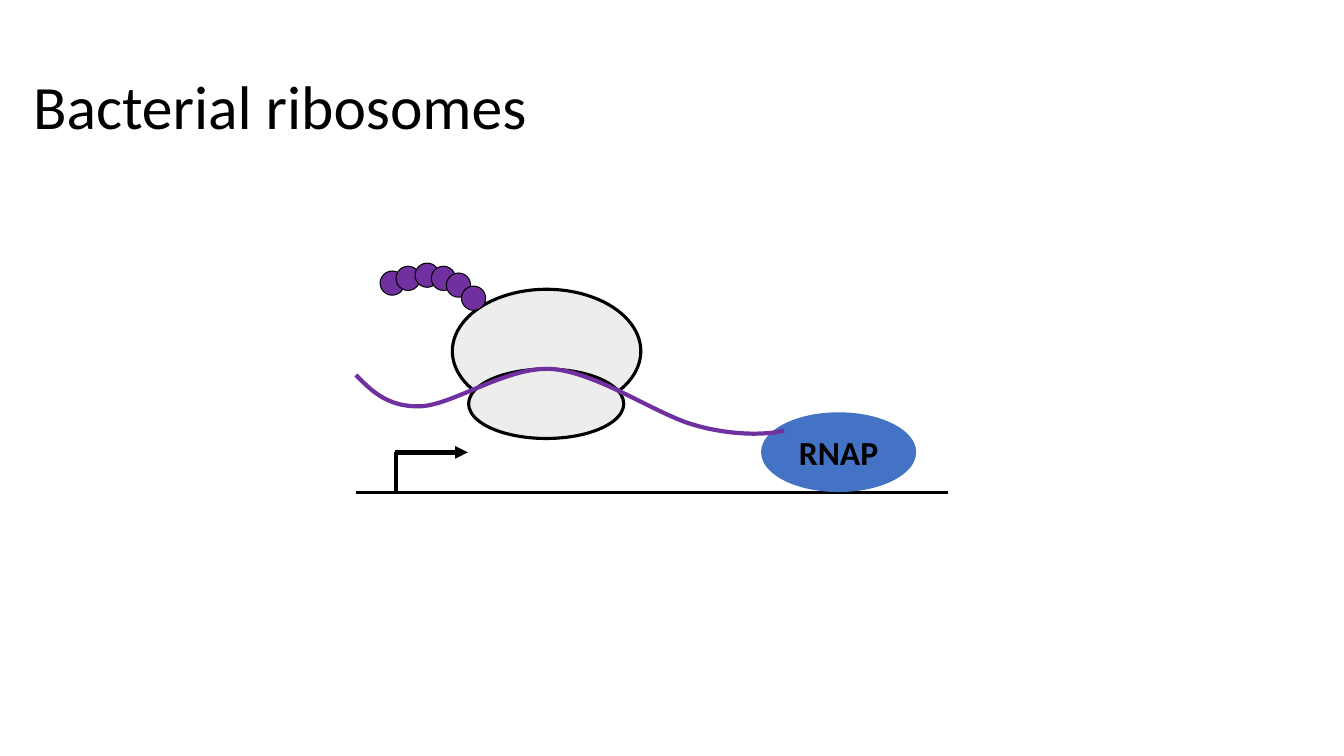
from lxml import etree
from pptx import Presentation
from pptx.dml.color import RGBColor
from pptx.enum.shapes import MSO_CONNECTOR, MSO_SHAPE
from pptx.enum.text import MSO_ANCHOR, MSO_AUTO_SIZE, PP_ALIGN
from pptx.oxml.ns import qn
from pptx.util import Cm, Pt

OVAL = MSO_SHAPE.OVAL
STRAIGHT = MSO_CONNECTOR.STRAIGHT
MIDDLE = MSO_ANCHOR.MIDDLE
LEFT, CENTER = PP_ALIGN.LEFT, PP_ALIGN.CENTER
NO_AUTOFIT = MSO_AUTO_SIZE.NONE

BLACK = RGBColor(0x00, 0x00, 0x00)
GREY = RGBColor(0xED, 0xED, 0xED)
PURPLE = RGBColor(0x70, 0x30, 0xA0)
BLUE = RGBColor(0x44, 0x72, 0xC4)
FONT = "Calibri"

# Content, all lengths in centimetres
TITLE = "Bacterial ribosomes"
POLYMERASE = "RNAP"
SUBUNITS = [(11.4, 7.29, 4.75, 3.12), (11.81, 9.3, 3.91, 1.75)]
RESIDUE_SIZE = 0.61
RESIDUES = [(9.58, 6.83), (9.98, 6.71), (10.46, 6.63),
            (10.87, 6.71), (11.25, 6.88), (11.63, 7.21)]
DNA_START, DNA_END, DNA_Y = 8.97, 23.88, 12.42
PROMOTER_X, PROMOTER_Y, PROMOTER_END = 9.98, 11.4, 11.79
MRNA_START = (8.97, 9.45)
MRNA_CURVES = [  # two control points and an end point each
    ((9.37, 9.86), (9.78, 10.26), (10.59, 10.24)),
    ((11.43, 10.21), (12.78, 9.22), (13.92, 9.3)),
    ((15.09, 9.4), (16.56, 10.46), (17.53, 10.72)),
    ((18.52, 11.0), (19.41, 10.95), (19.76, 10.85)),
]
CURVE_STEPS = 24

prs = Presentation()
prs.slide_width, prs.slide_height = Cm(33.87), Cm(19.05)
slide = prs.slides.add_slide(prs.slide_layouts[5])
shapes = slide.shapes


def add_oval(left, top, width, height, fill, line_width=None):
    oval = shapes.add_shape(OVAL, Cm(left), Cm(top), Cm(width), Cm(height))
    oval.shadow.inherit = False
    oval.fill.solid()
    oval.fill.fore_color.rgb = fill
    if line_width is None:
        oval.line.fill.background()
    else:
        oval.line.color.rgb = BLACK
        oval.line.width = Pt(line_width)
    return oval


def add_line(x1, y1, x2, y2, width, arrow=False):
    line = shapes.add_connector(STRAIGHT, Cm(x1), Cm(y1), Cm(x2), Cm(y2))
    line.line.color.rgb = BLACK
    line.line.width = Pt(width)
    if arrow:
        etree.SubElement(line.line._get_or_add_ln(), qn("a:tailEnd"), type="triangle")
    etree.SubElement(line._element.spPr, qn("a:effectLst"))


def set_text(shape, text, size, align, bold=False):
    frame = shape.text_frame
    frame.text = text
    frame.word_wrap = True
    frame.auto_size = NO_AUTOFIT
    frame.vertical_anchor = MIDDLE
    paragraph = frame.paragraphs[0]
    paragraph.alignment = align
    font = paragraph.font
    font.name, font.size, font.bold = FONT, Pt(size), bold
    font.color.rgb = BLACK
    return paragraph


def bezier_points(p0, p1, p2, p3):
    for step in range(1, CURVE_STEPS + 1):
        t = step / CURVE_STEPS
        u = 1 - t
        yield tuple(Cm(u**3 * a + 3 * u * u * t * b + 3 * u * t * t * c + t**3 * d)
                    for a, b, c, d in zip(p0, p1, p2, p3))


# Title
title = shapes.title
title.left, title.top, title.width, title.height = Cm(0.58), Cm(0.46), Cm(29.92), Cm(4.6)
set_text(title, TITLE, 44, LEFT).line_spacing = 0.9

# Ribosome and growing peptide
for subunit in SUBUNITS:
    add_oval(*subunit, GREY, 2.25)
for left, top in RESIDUES:
    add_oval(left, top, RESIDUE_SIZE, RESIDUE_SIZE, PURPLE, 0.75)

# DNA and polymerase
add_line(DNA_START, DNA_Y, DNA_END, DNA_Y, 2.25)
polymerase = add_oval(19.18, 10.39, 3.91, 2.01, BLUE)
set_text(polymerase, POLYMERASE, 24, CENTER, bold=True)

# Messenger RNA
mrna_path = shapes.build_freeform(*map(Cm, MRNA_START))
curve_start = MRNA_START
for curve in MRNA_CURVES:
    mrna_path.add_line_segments(bezier_points(curve_start, *curve), close=False)
    curve_start = curve[-1]
mrna = mrna_path.convert_to_shape()
mrna.shadow.inherit = False
mrna.fill.background()
mrna.line.color.rgb = PURPLE
mrna.line.width = Pt(3)

# Promoter arrow
add_line(PROMOTER_X, PROMOTER_Y, PROMOTER_X, DNA_Y, 3)
add_line(PROMOTER_X - 0.02, PROMOTER_Y, PROMOTER_END, PROMOTER_Y, 3, arrow=True)

prs.save("out.pptx")
